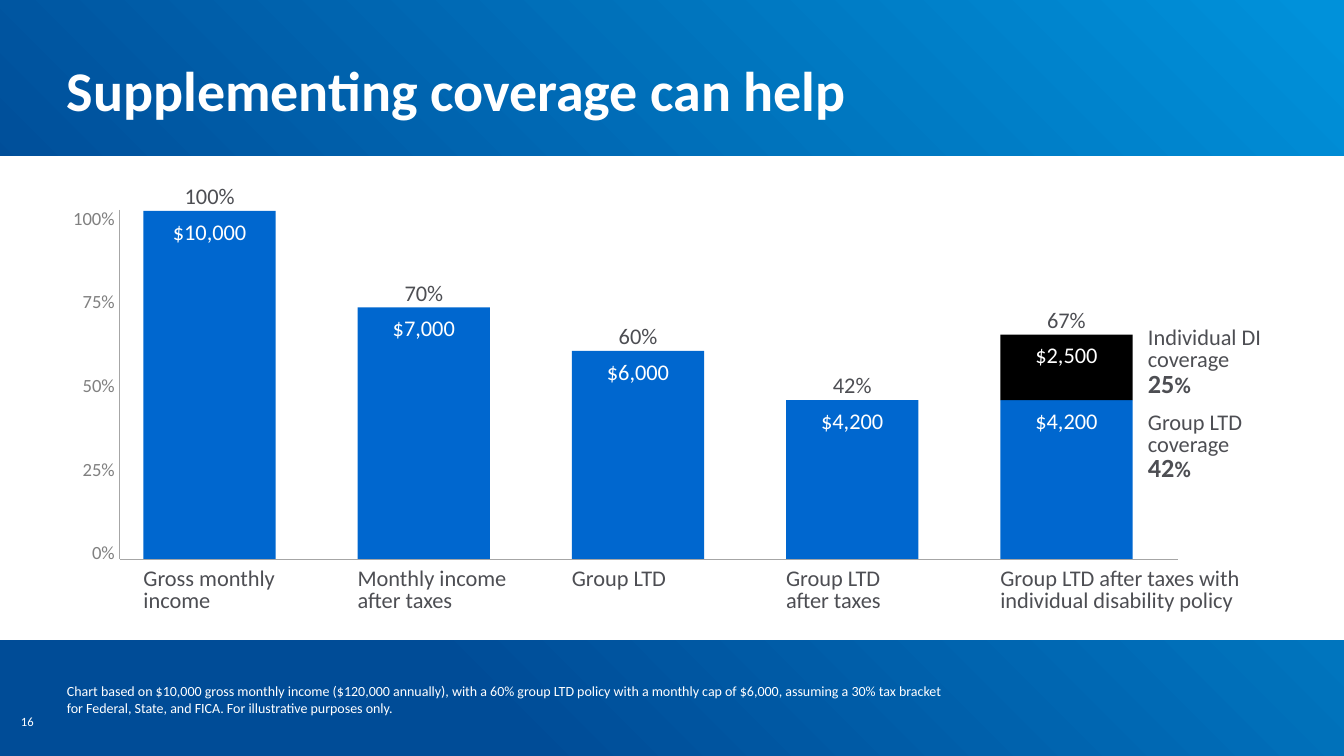
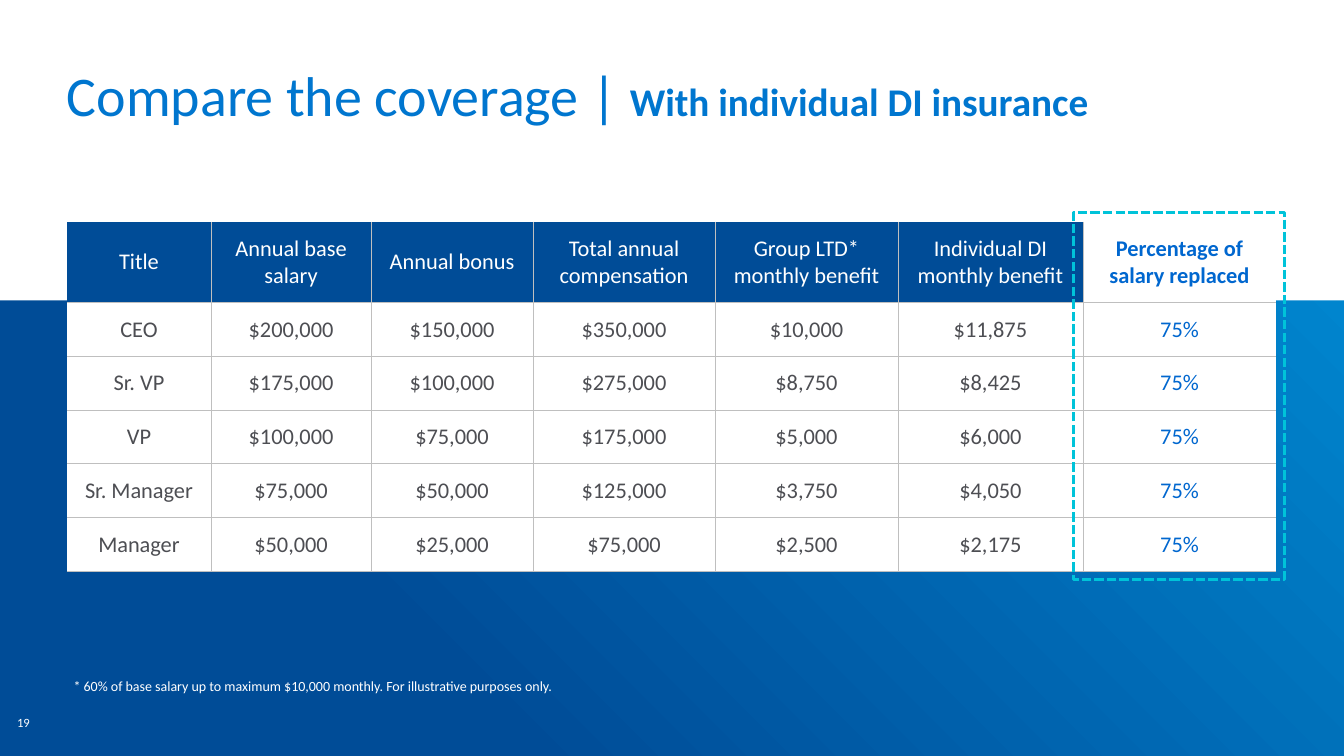
from dataclasses import dataclass, replace
from typing import Optional, Sequence, Union

from lxml import etree
from pptx import Presentation
from pptx.dml.color import RGBColor
from pptx.enum.dml import MSO_LINE
from pptx.enum.shapes import MSO_CONNECTOR, MSO_SHAPE
from pptx.enum.text import MSO_ANCHOR, PP_ALIGN
from pptx.oxml.ns import qn
from pptx.util import Pt

LEFT, CENTER, RIGHT = PP_ALIGN.LEFT, PP_ALIGN.CENTER, PP_ALIGN.RIGHT
TOP, MIDDLE, BOTTOM = MSO_ANCHOR.TOP, MSO_ANCHOR.MIDDLE, MSO_ANCHOR.BOTTOM
RECT, STRAIGHT, DASH = MSO_SHAPE.RECTANGLE, MSO_CONNECTOR.STRAIGHT, MSO_LINE.SQUARE_DOT

FONT = "Calibri"
SLIDE_W, SLIDE_H = 960, 540
MARGIN = 47.8
COLORS = {
    "navy": "004C97", "sky": "0091DA", "blue": "0067CF", "title": "0076CF",
    "cyan": "00C3D9", "text": "4D4E53", "scale": "808080", "axis": "A6A6A6",
    "border": "BFBFBF", "white": "FFFFFF", "black": "000000",
}


@dataclass(frozen=True)
class Box:
    x: float
    y: float
    w: float
    h: float


@dataclass(frozen=True)
class Style:
    size: float = 16
    color: str = "text"
    bold: bool = False
    align: PP_ALIGN = LEFT
    anchor: MSO_ANCHOR = TOP
    inset: tuple[float, float] = (0, 5)
    spacing: Optional[Union[float, Pt]] = None
    gap: float = 0


@dataclass(frozen=True)
class Run:
    text: str
    size: float
    bold: bool


@dataclass(frozen=True)
class Segment:
    height: float
    amount: str
    color: str = "blue"


@dataclass(frozen=True)
class Column:
    category: str
    percent: str
    segments: tuple[Segment, ...]  # from the axis upwards
    label_w: float = 119.5


Para = Union[str, Sequence[Run]]

TITLE = Style(40, "white", True, inset=(0, 0), spacing=0.8)
BODY = Style()
LABEL = replace(BODY, spacing=Pt(16), gap=2.7)
VALUE = replace(BODY, align=CENTER)
AMOUNT = replace(VALUE, color="white")
SCALE = Style(13.3, "scale", align=RIGHT, anchor=MIDDLE, inset=(0, 0), gap=43.8)
NOTE = Style(10, "white", anchor=BOTTOM, inset=(0, 0))
PAGE = replace(NOTE, size=9)

# Bar chart
BASELINE, BAR_LEFT, BAR_PITCH, BAR_W = 399.6, 102.5, 153, 94.5
COLUMNS = (
    Column("Gross monthly income", "100%", (Segment(249, "$10,000"),)),
    Column("Monthly income after taxes", "70%", (Segment(180, "$7,000"),)),
    Column("Group LTD", "60%", (Segment(149, "$6,000"),)),
    Column("Group LTD\vafter taxes", "42%", (Segment(113.8, "$4,200"),)),
    Column("Group LTD after taxes with individual disability policy", "67%",
           (Segment(113.8, "$4,200"), Segment(46.8, "$2,500", "black")), 198),
)
SIDE_LABELS = (("Individual DI coverage", "25"), ("Group LTD coverage", "42"))

# Coverage table
COL_WIDTHS = (103, 114.3, 115.7, 130, 130.7, 132.1, 138)
HEADER_H, ROW_H = 57.6, 38.4
ROWS = (
    ("Title", "Annual base salary", "Annual bonus", "Total annual compensation",
     "Group LTD* monthly benefit", "Individual DI monthly benefit",
     "Percentage of salary replaced"),
    ("CEO", "$200,000", "$150,000", "$350,000", "$10,000", "$11,875", "75%"),
    ("Sr. VP", "$175,000", "$100,000", "$275,000", "$8,750", "$8,425", "75%"),
    ("VP", "$100,000", "$75,000", "$175,000", "$5,000", "$6,000", "75%"),
    ("Sr. Manager", "$75,000", "$50,000", "$125,000", "$3,750", "$4,050", "75%"),
    ("Manager", "$50,000", "$25,000", "$75,000", "$2,500", "$2,175", "75%"),
)


def rgb(name: str) -> RGBColor:
    return RGBColor.from_string(COLORS[name])


def points(box: Box) -> tuple[Pt, Pt, Pt, Pt]:
    return Pt(box.x), Pt(box.y), Pt(box.w), Pt(box.h)


def set_font(font, style: Style) -> None:
    font.name, font.size, font.bold = FONT, Pt(style.size), style.bold
    font.color.rgb = rgb(style.color)


def write(tf, paras: Sequence[Para], style: Style) -> None:
    tf.word_wrap = True
    tf.vertical_anchor = style.anchor
    tf.margin_left = tf.margin_right = Pt(style.inset[0])
    tf.margin_top = tf.margin_bottom = Pt(style.inset[1])
    for i, content in enumerate(paras):
        p = tf.add_paragraph() if i else tf.paragraphs[0]
        p.alignment = style.align
        if style.spacing:
            p.line_spacing = style.spacing
        if i and style.gap:
            p.space_before = Pt(style.gap)
        set_font(p.font, style)
        if isinstance(content, str):
            p.text = content
            continue
        for part in content:
            r = p.add_run()
            r.text = part.text
            r.font.size, r.font.bold = Pt(part.size), part.bold


def add_text(slide, box: Box, paras: Sequence[Para], style: Style) -> None:
    write(slide.shapes.add_textbox(*points(box)).text_frame, paras, style)


def add_rect(slide, box: Box, color: Optional[str]):
    sp = slide.shapes.add_shape(RECT, *points(box))
    sp.shadow.inherit = False
    sp.line.fill.background()
    if color:
        sp.fill.solid()
        sp.fill.fore_color.rgb = rgb(color)
    else:
        sp.fill.background()
    return sp


def add_line(slide, x1: float, y1: float, x2: float, y2: float) -> None:
    line = slide.shapes.add_connector(STRAIGHT, Pt(x1), Pt(y1), Pt(x2), Pt(y2))
    line.line.color.rgb = rgb("axis")
    line.line.width = Pt(0.5)
    etree.SubElement(line._element.spPr, qn("a:effectLst"))


def set_borders(cell, sides: str) -> None:
    tc_pr = cell._tc.get_or_add_tcPr()
    for side in "LRTB":
        ln = etree.SubElement(tc_pr, qn(f"a:ln{side}"), w=str(Pt(0.5)))
        if side in sides:
            fill = etree.SubElement(ln, qn("a:solidFill"))
            etree.SubElement(fill, qn("a:srgbClr"), val=COLORS["border"])
        else:
            etree.SubElement(ln, qn("a:noFill"))


def set_background(master) -> None:
    fill = master.background.fill
    fill.gradient()
    fill.gradient_angle = 45
    for stop, position, color in zip(fill.gradient_stops, (0.25, 0.99), ("navy", "sky")):
        stop.position = position
        stop.color.rgb = rgb(color)


def add_column(slide, x: float, column: Column) -> None:
    top = BASELINE
    for segment in column.segments:
        top -= segment.height
        sp = add_rect(slide, Box(x, top, BAR_W, segment.height), segment.color)
        write(sp.text_frame, [segment.amount], AMOUNT)
    add_text(slide, Box(x, top - 25.5, BAR_W, 26), [column.percent], VALUE)
    add_text(slide, Box(x, 401, column.label_w, 37.5), [column.category], LABEL)


def add_table(slide) -> None:
    frame = slide.shapes.add_table(
        len(ROWS), len(COL_WIDTHS), Pt(MARGIN), Pt(158.4),
        Pt(sum(COL_WIDTHS)), Pt(HEADER_H + ROW_H * (len(ROWS) - 1)))
    table = frame.table
    table.horz_banding = False
    for col, width in zip(table.columns, COL_WIDTHS):
        col.width = Pt(width)
    last = len(COL_WIDTHS) - 1
    for i, row in enumerate(ROWS):
        table.rows[i].height = Pt(ROW_H if i else HEADER_H)
        for j, text in enumerate(row):
            cell = table.cell(i, j)
            header, result = i == 0, j == last
            dark = header and not result
            set_borders(cell, "B" + "T" * (not header) + "L" * (j > 0) + "R" * (not result))
            cell.fill.solid()
            cell.fill.fore_color.rgb = rgb("navy" if dark else "white")
            cell.vertical_anchor = MIDDLE
            cell.margin_left = cell.margin_right = Pt(0 if dark else 9.3)
            cell.margin_top = cell.margin_bottom = Pt(9.3)
            p = cell.text_frame.paragraphs[0]
            p.text = text
            p.alignment = CENTER
            color = "blue" if result else "white" if header else "text"
            set_font(p.font, Style(color=color, bold=header and result))


def build_chart_slide(slide) -> None:
    add_rect(slide, Box(0, 111.5, SLIDE_W, 345.6), "white")
    add_text(slide, Box(MARGIN, 49, 790, 41), ["Supplementing coverage can help"], TITLE)
    # Bars, axes and scale
    for i, column in enumerate(COLUMNS):
        add_column(slide, BAR_LEFT + i * BAR_PITCH, column)
    add_line(slide, 85.5, 150, 85.5, BASELINE)
    add_line(slide, 85.5, BASELINE, 841.5, BASELINE)
    add_text(slide, Box(34, 150.5, 48, 249),
             [f"{n}%" for n in range(100, -1, -25)], SCALE)
    # Shares of the last column
    for i, (label, share) in enumerate(SIDE_LABELS):
        add_text(slide, Box(820, 229 + i * 60.5, 94.5, 57),
                 [label, [Run(share, 18.7, True), Run("%", 16, True)]], LABEL)
    # Footer
    add_text(slide, Box(MARGIN, 484, 630, 27.4), [
        "Chart based on $10,000 gross monthly income ($120,000 annually), with a 60% "
        "group LTD policy with a monthly cap of $6,000, assuming a 30% tax bracket for "
        "Federal, State, and FICA. For illustrative purposes only."], NOTE)
    add_text(slide, Box(15, 499, 21, 21.5), ["16"], PAGE)


def build_table_slide(slide) -> None:
    add_rect(slide, Box(0, 0, SLIDE_W, 214.5), "white")
    add_table(slide)
    add_text(slide, Box(MARGIN, 49, 864, 61),
             [[Run("Compare the coverage | ", 40, False),
               Run("With individual DI insurance", 28, True)]],
             replace(TITLE, color="title", bold=False, inset=(0, 3.6)))
    # Highlight of the result column
    sp = add_rect(slide, Box(766.8, 151.9, 150.5, 262), None)
    sp.line.color.rgb = rgb("cyan")
    sp.line.width = Pt(2.25)
    sp.line.dash_style = DASH
    # Footer
    add_text(slide, Box(45.5, 480.2, 836, 19.5),
             ["* 60% of base salary up to maximum $10,000 monthly. "
              "For illustrative purposes only."],
             replace(NOTE, anchor=TOP, inset=(7.2, 3.6)))
    add_text(slide, Box(12.2, 492, 33, 29.3), ["19"], PAGE)


def main() -> None:
    prs = Presentation()
    prs.slide_width, prs.slide_height = Pt(SLIDE_W), Pt(SLIDE_H)
    set_background(prs.slide_master)
    for build in (build_chart_slide, build_table_slide):
        build(prs.slides.add_slide(prs.slide_layouts[6]))
    prs.save("out.pptx")


if __name__ == "__main__":
    main()
